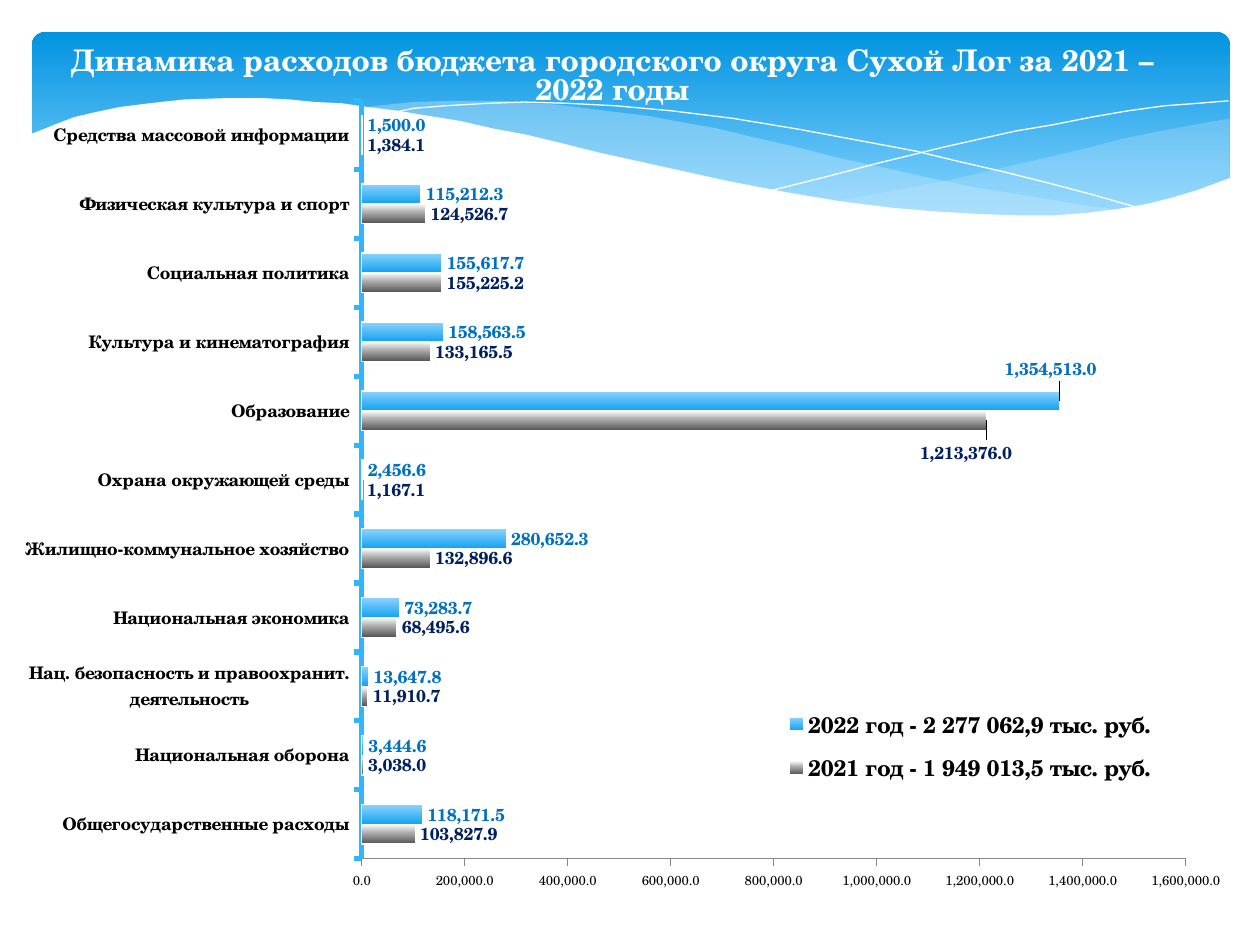
import pptx
import pptx.chart.data
import pptx.dml.color
import pptx.enum.chart
import pptx.enum.shapes
import pptx.enum.text
import pptx.oxml.ns
import pptx.util
from lxml import etree

Cm, Pt = pptx.util.Cm, pptx.util.Pt
RGB = pptx.dml.color.RGBColor.from_string
qn = pptx.oxml.ns.qn

FONT = "TeX Gyre Schola"
NUMBER_FORMAT = "#,##0.0"
COLORS = {
    "white": "FFFFFF", "black": "000000", "mist": "C6E7FC",
    "sky": "0293E0", "pale sky": "83D3FE", "axis": "31B6FD", "rule": "878787",
    "navy": "002060", "blue": "0070C0",
    "grey": "ABABAB", "dark grey": "545454",
    "bar top": "8CD3FF", "bar bottom": "14A2EF",
}


def fill_gradient(fill, owner, stops):
    """Fill from top to bottom with (percent, color name) stops."""
    fill.gradient()
    fill.gradient_angle = 270
    stop_list = next(owner.iter(qn("a:gsLst")))
    for old_stop in list(stop_list):
        stop_list.remove(old_stop)
    for percent, name in stops:
        stop = etree.SubElement(stop_list, qn("a:gs"), pos=str(percent * 1000))
        etree.SubElement(stop, qn("a:srgbClr"), val=COLORS[name])


def place_part(part, index, **settings):
    """Give a chart part a manual layout as its child number index."""
    for old_layout in part.findall(qn("c:layout")):
        part.remove(old_layout)
    layout = etree.Element(qn("c:layout"))
    manual = etree.SubElement(layout, qn("c:manualLayout"))
    for key, value in settings.items():
        etree.SubElement(manual, qn("c:" + key), val=str(value))
    part.insert(index, layout)


deck = pptx.Presentation()
deck.slide_width, deck.slide_height = Cm(25.4), Cm(19.05)
page = deck.slides.add_slide(deck.slide_layouts[5])
title = page.shapes.title

# Blue banner
banner = page.shapes.add_shape(
    pptx.enum.shapes.MSO_SHAPE.ROUNDED_RECTANGLE,
    Cm(0.64), Cm(0.64), Cm(24.16), Cm(3.96))
banner.adjustments[0] = 0.07
banner.shadow.inherit = False
banner.line.fill.background()
fill_gradient(banner.fill, banner.element, [(0, "sky"), (90, "pale sky")])

# Waves: points in hundredths of an inch, fill, opacity
right_wave = [
    (976, 94), (948, 99), (921, 104), (891, 110), (861, 118), (805, 131),
    (753, 143), (706, 152), (661, 160), (691, 164), (719, 167), (745, 169),
    (769, 171), (792, 172), (824, 172), (854, 170), (881, 167), (905, 163),
    (928, 158), (949, 152), (963, 147), (976, 141)]
middle_wave = [
    (893, 167), (866, 164), (837, 159), (807, 154), (775, 149), (741, 142),
    (706, 134), (668, 126), (629, 116), (598, 109), (569, 102), (541, 97),
    (514, 92), (489, 89), (465, 86), (442, 83), (420, 82), (399, 80),
    (361, 80), (328, 81), (299, 84), (286, 86), (323, 90), (362, 97),
    (404, 106), (449, 116), (491, 126), (530, 135), (566, 143), (601, 150),
    (634, 156), (665, 161), (695, 165), (722, 168), (748, 170), (773, 172),
    (807, 173), (838, 172), (867, 170)]
falling_line = [
    (309, 90), (328, 86), (353, 84), (387, 82), (416, 81), (450, 82),
    (489, 84), (533, 88), (582, 94), (636, 103), (695, 114), (727, 120),
    (760, 128), (795, 136), (831, 145), (869, 155), (907, 166)]
rising_line = [
    (613, 151), (653, 141), (695, 130), (748, 117), (806, 104), (836, 99),
    (866, 93), (895, 88), (924, 84), (951, 82), (975, 80)]
white_wave = [
    (977, 141), (950, 151), (930, 157), (910, 162), (887, 166), (863, 169),
    (837, 171), (809, 171), (778, 170), (744, 168), (708, 165), (668, 160),
    (626, 153), (579, 144), (529, 133), (475, 121), (447, 114), (418, 107),
    (391, 102), (365, 96), (340, 92), (316, 88), (292, 85), (271, 82),
    (250, 81), (230, 79), (211, 78), (177, 78), (146, 79), (119, 82),
    (95, 85), (76, 89), (59, 93), (46, 98), (36, 102), (23, 107),
    (23, 224), (977, 224)]
waves = [
    (right_wave, "mist", 29), (middle_wave, "mist", 40),
    (falling_line, None, 100), (rising_line, None, 100),
    (white_wave, "white", 100)]
for points, color, opacity in waves:
    builder = page.shapes.build_freeform(*points[0], scale=Cm(0.0254))
    builder.add_line_segments(points[1:], close=color is not None)
    wave = builder.convert_to_shape()
    wave.shadow.inherit = False
    if color is None:
        wave.fill.background()
        wave.line.color.rgb = RGB(COLORS["white"])
        wave.line.width = Pt(0)
        continue
    wave.line.fill.background()
    wave.fill.solid()
    wave.fill.fore_color.rgb = RGB(COLORS[color])
    if opacity < 100:
        tint = next(wave.element.iter(qn("a:srgbClr")))
        etree.SubElement(tint, qn("a:alpha"), val=str(opacity * 1000))

# Title, brought in front of the banner
title.element.getparent().append(title.element)
title.left, title.top, title.width, title.height = Cm(0.79), Cm(0.53), Cm(23.11), Cm(1.27)
frame = title.text_frame
frame.word_wrap = True
frame.auto_size = pptx.enum.text.MSO_AUTO_SIZE.NONE
frame.vertical_anchor = pptx.enum.text.MSO_ANCHOR.TOP
frame.margin_top, frame.margin_bottom = Cm(0.45), 0
para = frame.paragraphs[0]
para.alignment = pptx.enum.text.PP_ALIGN.CENTER
para.line_spacing = 0.8
span = para.add_run()
span.text = "Динамика расходов бюджета городского округа Сухой Лог за 2021 – 2022 годы"
span.font.name, span.font.size, span.font.bold = FONT, Pt(17), True
span.font.color.rgb = RGB(COLORS["white"])

# Chart of spending by section
spending = [
    ("Общегосударственные расходы", 103827.9, 118171.5),
    ("Национальная оборона", 3038.0, 3444.6),
    ("Нац. безопасность и правоохранит. деятельность", 11910.7, 13647.8),
    ("Национальная экономика", 68495.6, 73283.7),
    ("Жилищно-коммунальное хозяйство", 132896.6, 280652.3),
    ("Охрана окружающей среды", 1167.1, 2456.6),
    ("Образование", 1213376.0, 1354513.0),
    ("Культура и кинематография", 133165.5, 158563.5),
    ("Социальная политика", 155225.2, 155617.7),
    ("Физическая культура и спорт", 124526.7, 115212.3),
    ("Средства массовой информации", 1384.1, 1500.0)]
sections, spent_2021, spent_2022 = zip(*spending)
data = pptx.chart.data.CategoryChartData(number_format=NUMBER_FORMAT)
data.categories = sections
data.add_series("2021 год - 1 949 013,5 тыс. руб.", spent_2021)
data.add_series("2022 год - 2 277 062,9 тыс. руб.", spent_2022)
chart = page.shapes.add_chart(
    pptx.enum.chart.XL_CHART_TYPE.BAR_CLUSTERED,
    Cm(0.51), Cm(1.52), Cm(24.21), Cm(16.41), data).chart
chart.has_title = False
chart.font.name, chart.font.size = "Cabin", Pt(10)
chart.font.color.rgb = RGB(COLORS["black"])
place_part(next(chart.element.iter(qn("c:plotArea"))), 0, layoutTarget="inner",
           xMode="edge", yMode="edge", x=0.274, y=0.031, w=0.692, h=0.939)

# Axes
axes = [(chart.category_axis, 10, True, "axis", 3),
        (chart.value_axis, 7.5, False, "rule", 0.75)]
for axis, size, bold, color, width in axes:
    axis.has_major_gridlines = False
    axis.major_tick_mark = pptx.enum.chart.XL_TICK_MARK.OUTSIDE
    axis.format.line.color.rgb = RGB(COLORS[color])
    axis.format.line.width = Pt(width)
    font = axis.tick_labels.font
    font.name, font.size, font.bold = FONT, Pt(size), bold
    font.color.rgb = RGB(COLORS["black"])
chart.value_axis.minimum_scale = 0
chart.value_axis.maximum_scale = 1600000
chart.value_axis.major_unit = 200000
chart.value_axis.tick_labels.number_format = NUMBER_FORMAT
chart.value_axis.tick_labels.number_format_is_linked = False

# Bars and value labels; the education labels are shifted
plot = chart.plots[0]
plot.gap_width, plot.overlap, plot.vary_by_categories = 150, 0, False
styles = [
    ([(0, "white"), (44, "grey"), (100, "dark grey")], "navy", -0.06, 0.04),
    ([(0, "bar top"), (100, "bar bottom")], "blue", -0.05, -0.04)]
for series, (stops, color, shift_x, shift_y) in zip(plot.series, styles):
    series.invert_if_negative = False
    fill_gradient(series.format.fill, series._element, stops)
    series.format.line.color.rgb = RGB(COLORS["white"])
    series.format.line.width = Pt(0.75)
    labels = series.data_labels
    labels.show_value = True
    labels.number_format, labels.number_format_is_linked = NUMBER_FORMAT, False
    education = series.points[sections.index("Образование")].data_label
    for label in (labels, education):
        label.position = pptx.enum.chart.XL_LABEL_POSITION.OUTSIDE_END
        label.font.name, label.font.size, label.font.bold = FONT, Pt(10), True
        label.font.color.rgb = RGB(COLORS[color])
    shifted = next(series._element.iter(qn("c:dLbl")))
    place_part(shifted, 1, x=shift_x, y=shift_y)
    shifted.insert(2, etree.Element(
        qn("c:numFmt"), formatCode=NUMBER_FORMAT, sourceLinked="0"))

# Legend
chart.has_legend = True
legend = chart.legend
legend.position = pptx.enum.chart.XL_LEGEND_POSITION.TOP
legend.include_in_layout = False
legend.font.name, legend.font.size, legend.font.bold = FONT, Pt(13), True
legend.font.color.rgb = RGB(COLORS["black"])
place_part(next(chart.element.iter(qn("c:legend"))), 1, xMode="edge",
           yMode="edge", x=0.62, y=0.77, w=0.33, h=0.12)

deck.save("out.pptx")
